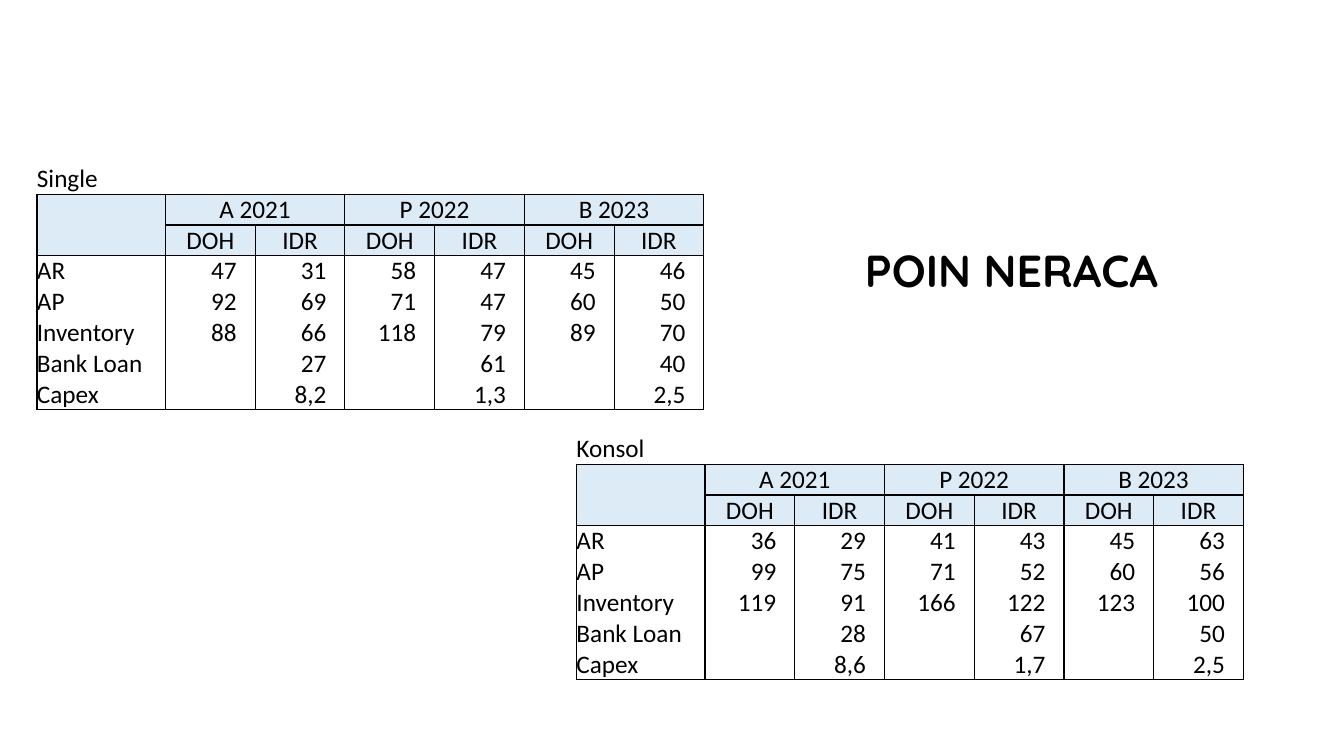
"""Build the balance sheet points slide with its two tables."""
from lxml.etree import SubElement
from pptx import Presentation
from pptx.dml.color import RGBColor
from pptx.enum.text import MSO_ANCHOR, PP_ALIGN
from pptx.oxml.ns import qn
from pptx.util import Pt

COLORS = {"ink": "000000", "header": "DDEBF7"}
PLAIN_STYLE = "{2D5ABB26-0587-4C30-8999-92F81FD0307C}"
YEARS = ["A 2021", "P 2022", "B 2023"]
LABELS = ["AR", "AP", "Inventory", "Bank Loan", "Capex"]
SINGLE = [
    ["47", "31", "58", "47", "45", "46"],
    ["92", "69", "71", "47", "60", "50"],
    ["88", "66", "118", "79", "89", "70"],
    ["", "27", "", "61", "", "40"],
    ["", "8,2", "", "1,3", "", "2,5"],
]
KONSOL = [
    ["36", "29", "41", "43", "45", "63"],
    ["99", "75", "71", "52", "60", "56"],
    ["119", "91", "166", "122", "123", "100"],
    ["", "28", "", "67", "", "50"],
    ["", "8,6", "", "1,7", "", "2,5"],
]
LABEL_WIDTH, VALUE_WIDTH, ROW_HEIGHT = 91.8, 64.1, 22
NUMBER_MARGIN = 13.2
FIRST_BODY_ROW, LAST_ROW = 3, 7


def write_text(frame, text, size=18, font="Calibri", bold=False, align=PP_ALIGN.LEFT):
    """Put one formatted line of text in a frame."""
    para = frame.paragraphs[0]
    para.alignment = align
    span = para.add_run()
    span.text = text
    span.font.size = Pt(size)
    span.font.name = font
    span.font.bold = bold
    span.font.color.rgb = RGBColor.from_string(COLORS["ink"])


def border_widths(row, column):
    """Return the border width of each side of a cell, zero for none."""
    if row == 0:
        return {"lnL": 0, "lnR": 0, "lnT": 0, "lnB": 1}
    outer = row == 1 or column == 0
    top_ruled = row <= FIRST_BODY_ROW and (row, column) != (2, 0)
    bottom_ruled = row in (1, 2, LAST_ROW) and (row, column) != (1, 0)
    return {
        "lnL": 1 if outer or column % 2 else 0.5,
        "lnR": 1 if outer or column % 2 == 0 else 0.5,
        "lnT": int(top_ruled),
        "lnB": int(bottom_ruled),
    }


def add_borders(cell, widths):
    """Set the four borders ahead of the fill of a cell."""
    properties = cell._tc.get_or_add_tcPr()
    for position, (side, width) in enumerate(widths.items()):
        line = SubElement(properties, qn(f"a:{side}"), w=str(Pt(width)))
        if width:
            fill = SubElement(line, qn("a:solidFill"))
            SubElement(fill, qn("a:srgbClr"), val=COLORS["ink"])
        else:
            SubElement(line, qn("a:noFill"))
        properties.insert(position, line)


def format_cell(cell, row, column):
    """Set the margins, fill and borders of a cell by its position."""
    cell.margin_left = cell.margin_right = cell.margin_top = cell.margin_bottom = 0
    cell.vertical_anchor = MSO_ANCHOR.BOTTOM
    if row in (1, 2):
        cell.fill.solid()
        cell.fill.fore_color.rgb = RGBColor.from_string(COLORS["header"])
    else:
        cell.fill.background()
    add_borders(cell, border_widths(row, column))


def add_balance_table(page, left, top, caption, values):
    """Add a captioned table of days on hand and amounts per year."""
    year_cells = [text for year in YEARS for text in (year, "")]
    lines = [[caption] + [""] * 6, [""] + year_cells, [""] + ["DOH", "IDR"] * 3]
    lines += [[label, *numbers] for label, numbers in zip(LABELS, values)]
    width = LABEL_WIDTH + 6 * VALUE_WIDTH
    table = page.shapes.add_table(
        len(lines), 7, Pt(left), Pt(top), Pt(width), Pt(ROW_HEIGHT * len(lines))).table
    table.first_row = table.horz_banding = False
    table._tbl.tblPr.find(qn("a:tableStyleId")).text = PLAIN_STYLE
    for column, item in enumerate(table.columns):
        item.width = Pt(VALUE_WIDTH if column else LABEL_WIDTH)
    for row, texts in enumerate(lines):
        table.rows[row].height = Pt(ROW_HEIGHT)
        for column, text in enumerate(texts):
            cell = table.cell(row, column)
            format_cell(cell, row, column)
            align = PP_ALIGN.LEFT
            if column and row in (1, 2):
                align = PP_ALIGN.CENTER
            elif column and row >= FIRST_BODY_ROW:
                align = PP_ALIGN.RIGHT
                cell.margin_right = Pt(NUMBER_MARGIN)
            if text:
                write_text(cell.text_frame, text, align=align)
    for column in (1, 3, 5):
        table.cell(1, column).merge(table.cell(1, column + 1))


def place_title(page, text):
    """Move the title placeholder and write the heading in it."""
    title = page.shapes.title
    title.left, title.top, title.width, title.height = Pt(610.5), Pt(170), Pt(278), Pt(46)
    title.text_frame.vertical_anchor = MSO_ANCHOR.TOP
    write_text(title.text_frame, text, size=32, font="Quicksand", bold=True)


def main():
    """Create the deck and save it."""
    deck = Presentation()
    deck.slide_width, deck.slide_height = Pt(960), Pt(540)
    page = deck.slides.add_slide(deck.slide_layouts[5])
    add_balance_table(page, 26.4, 116.8, "Single", SINGLE)
    add_balance_table(page, 411.8, 309.6, "Konsol", KONSOL)
    place_title(page, "POIN NERACA")
    deck.save("out.pptx")


if __name__ == "__main__":
    main()
